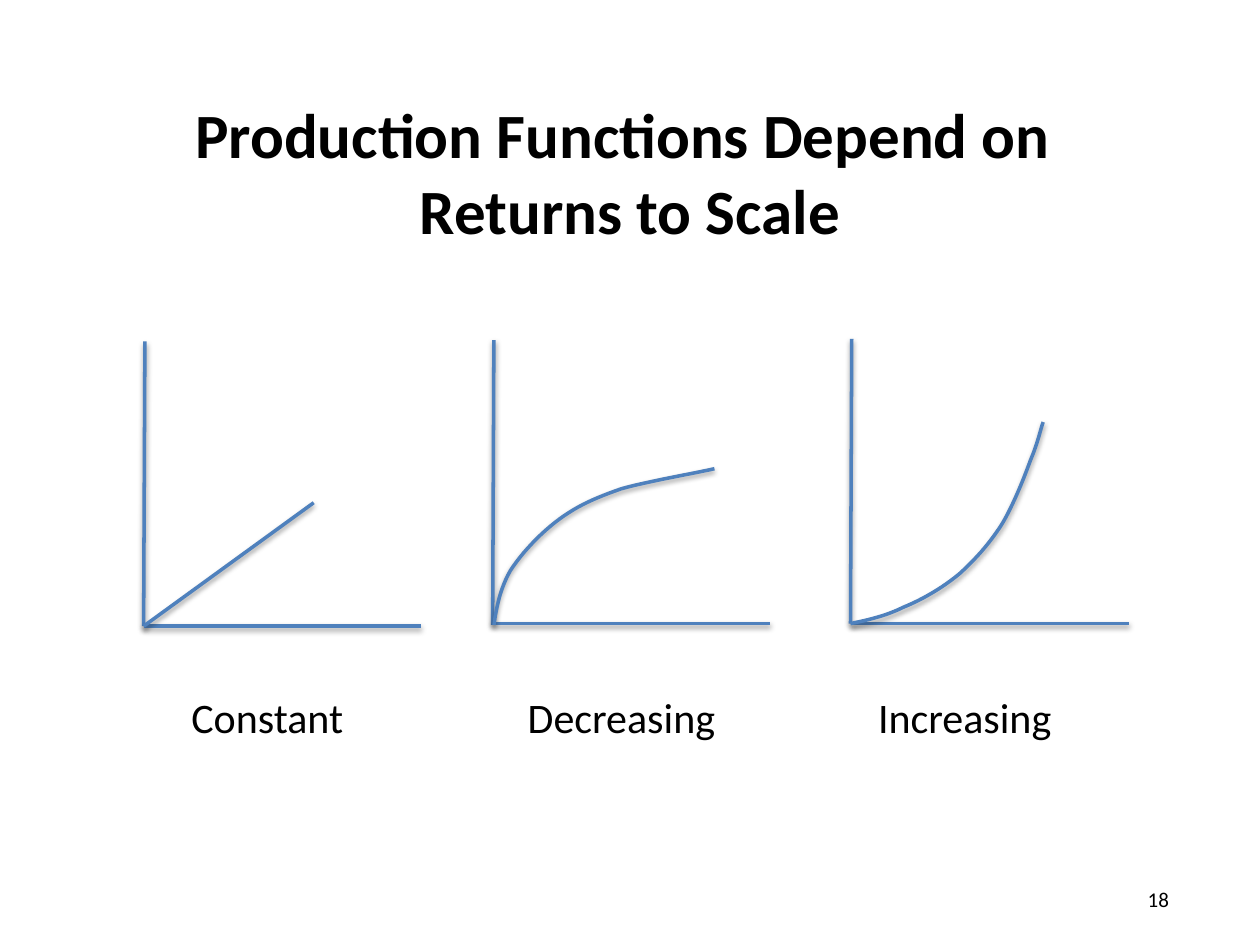
from dataclasses import dataclass

from lxml.etree import SubElement
from pptx import Presentation
from pptx.dml.color import RGBColor
from pptx.enum.shapes import MSO_CONNECTOR
from pptx.enum.text import MSO_ANCHOR, MSO_AUTO_SIZE, PP_ALIGN
from pptx.oxml.ns import qn
from pptx.util import Inches, Pt


@dataclass(frozen=True)
class Theme:
    font: str = "Calibri"
    ink: RGBColor = RGBColor(0x00, 0x00, 0x00)
    blue: RGBColor = RGBColor(0x4F, 0x81, 0xBD)
    title: Pt = Pt(36)
    label: Pt = Pt(24)
    page: Pt = Pt(12)
    stroke: Pt = Pt(2)


THEME = Theme()
STEPS = 12  # points along each curve segment

# Each graph: its axes as (start, end) pairs, then its curve
AXES = [
    [((1.15, 2.71), (1.14, 4.97)), ((1.14, 4.97), (3.34, 4.97))],
    [((3.92, 2.7), (3.91, 4.96)), ((3.91, 4.95), (6.11, 4.95))],
    [((6.76, 2.69), (6.75, 4.95)), ((6.76, 4.95), (8.96, 4.95))],
]
CONSTANT = ((1.14, 4.97), (2.49, 3.99))
# Start point, then two controls and an end for each segment
FALLING = [
    (3.92, 4.96),
    (3.94, 4.82), (3.97, 4.67), (4.05, 4.53),
    (4.14, 4.39), (4.29, 4.23), (4.44, 4.12),
    (4.59, 4.01), (4.73, 3.95), (4.93, 3.88),
    (5.14, 3.82), (5.55, 3.75), (5.67, 3.72),
]
RISING = [
    (6.75, 4.95),
    (6.89, 4.92), (7.03, 4.89), (7.17, 4.82),
    (7.32, 4.76), (7.49, 4.66), (7.62, 4.55),
    (7.74, 4.44), (7.84, 4.33), (7.94, 4.18),
    (8.03, 4.04), (8.13, 3.79), (8.18, 3.65),
    (8.24, 3.51), (8.26, 3.4), (8.28, 3.35),
]
LABELS = [("Constant", 1.42, 2), ("Decreasing", 4.09, 1.8), ("Increasing", 6.87, 1.99)]


def apply(item, values):
    for name, value in values.items():
        setattr(item, name, value)


def write(shape, box, lines, size, bold=False, align=PP_ALIGN.LEFT):
    """Place a text shape and fill it, one paragraph a line."""
    apply(shape, dict(zip(("left", "top", "width", "height"), map(Inches, box))))
    frame = shape.text_frame
    apply(frame, {
        "text": "\n".join(lines),
        "word_wrap": True,
        "auto_size": MSO_AUTO_SIZE.NONE,
        "vertical_anchor": MSO_ANCHOR.TOP,
    })
    for para in frame.paragraphs:
        para.alignment = align
        font = para.runs[0].font
        apply(font, {"name": THEME.font, "size": size, "bold": bold})
        font.color.rgb = THEME.ink


def add_text(slide, box, text, size):
    shape = slide.shapes.add_textbox(*map(Inches, box))
    write(shape, box, [text], size)


def style(shape):
    """Give a line or curve its blue stroke and soft shadow."""
    shape.line.color.rgb = THEME.blue
    shape.line.width = THEME.stroke
    effects = SubElement(shape._element.spPr, qn("a:effectLst"))
    shadow = SubElement(effects, qn("a:outerShdw"), {
        "blurRad": str(Pt(3.1)),
        "dist": str(Pt(1.6)),
        "dir": str(90 * 60000),
        "rotWithShape": "0",
    })
    black = SubElement(shadow, qn("a:srgbClr"), val="000000")
    SubElement(black, qn("a:alpha"), val="38000")


def add_line(slide, start, end):
    ends = map(Inches, start + end)
    style(slide.shapes.add_connector(MSO_CONNECTOR.STRAIGHT, *ends))


def blend(nodes, t):
    """Point at t on the cubic curve through four nodes."""
    s = 1 - t
    parts = (s**3, 3 * s * s * t, 3 * s * t * t, t**3)
    return tuple(Inches(sum(w * v for w, v in zip(parts, axis)))
                 for axis in zip(*nodes))


def add_curve(slide, nodes):
    points = [blend(nodes[i:i + 4], step / STEPS)
              for i in range(0, len(nodes) - 1, 3)
              for step in range(1, STEPS + 1)]
    pen = slide.shapes.build_freeform(*map(Inches, nodes[0]))
    pen.add_line_segments(points, close=False)
    shape = pen.convert_to_shape()
    shape.fill.background()
    style(shape)


def main():
    deck = Presentation()
    apply(deck, {"slide_width": Inches(10), "slide_height": Inches(7.5)})
    slide = deck.slides.add_slide(deck.slide_layouts[5])

    # Title
    lines = ["Production Functions Depend on ", "Returns to Scale"]
    write(slide.shapes.title, (0.4, 0.71, 9.2, 1.31), lines,
          THEME.title, bold=True, align=PP_ALIGN.CENTER)

    # Graphs
    for pair in AXES:
        for start, end in pair:
            add_line(slide, start, end)
    add_line(slide, *CONSTANT)
    for nodes in (FALLING, RISING):
        add_curve(slide, nodes)

    # Labels and page number
    for text, left, width in LABELS:
        add_text(slide, (left, 5.44, width, 0.5), text, THEME.label)
    add_text(slide, (9.01, 6.99, 0.49, 0.3), "18", THEME.page)

    deck.save("out.pptx")


if __name__ == "__main__":
    main()
